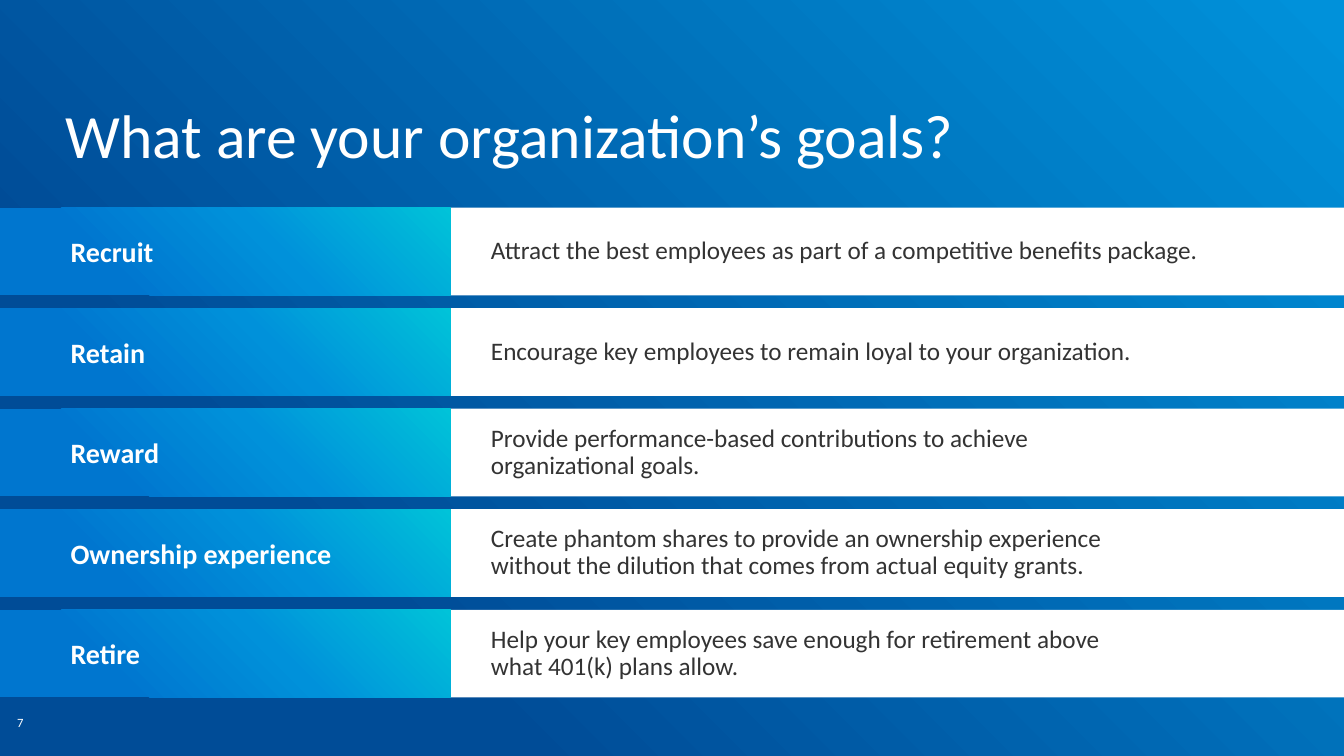
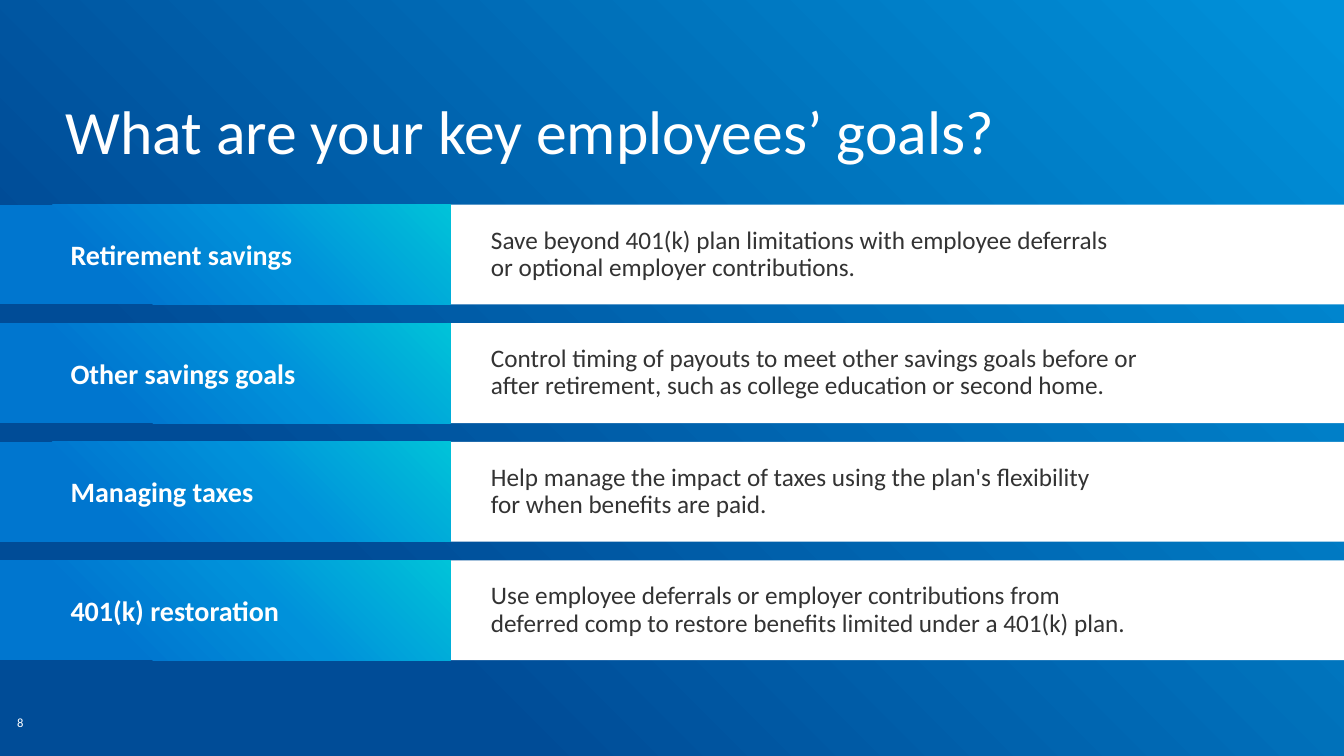
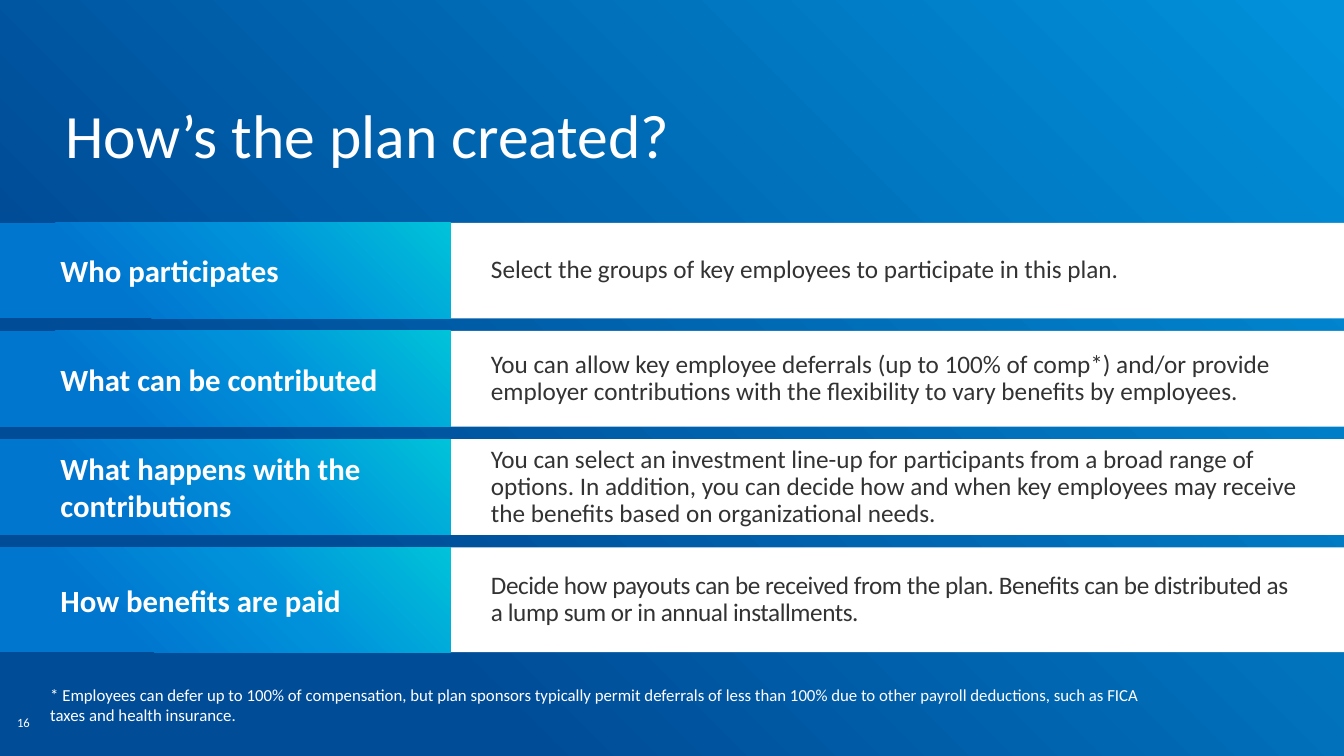
from copy import deepcopy

from pptx import Presentation
from pptx.dml.color import RGBColor
from pptx.enum import shapes, text
from pptx.oxml.ns import qn
from pptx.util import Inches, Pt


def rgb(value):
    return RGBColor.from_string(value)


class Deck:
    """Hold the shared style and the current slide, and draw each kind of element."""

    WHITE, GREY = "FFFFFF", "333333"
    BACKDROP = [(0.25, "004C97"), (0.99, "0091DA")]
    LABEL_FILL = [(0.25, "0076CF"), (0.6, "0091DA"), (1, "00C3D9")]
    WIDTH, HEIGHT, LABEL_WIDTH = 13.33, 7.5, 4.47

    def __init__(self):
        self.presentation = Presentation()
        self.presentation.slide_width = Inches(self.WIDTH)
        self.presentation.slide_height = Inches(self.HEIGHT)
        master = self.presentation.slide_master
        self.paint_gradient(master.background.fill, master.element, self.BACKDROP)
        self.slide = None

    def paint_gradient(self, fill, element, stops):
        fill.gradient()
        fill.gradient_angle = 45
        stop_list = element.find(".//" + qn("a:gsLst"))
        while len(stop_list) < len(stops):
            stop_list.append(deepcopy(stop_list[-1]))
        for stop, (position, color) in zip(fill.gradient_stops, stops):
            stop.position = position
            stop.color.rgb = rgb(color)

    def set_text(self, shape, content, size, color=WHITE, bold=False,
                 margins=(0, 0, 0, 0), anchor=text.MSO_ANCHOR.TOP, spacing=None, tracking=None):
        frame = shape.text_frame
        left, top, right, bottom = map(Inches, margins)
        frame_format = {"word_wrap": True, "vertical_anchor": anchor,
                        "margin_left": left, "margin_top": top,
                        "margin_right": right, "margin_bottom": bottom}
        for name, value in frame_format.items():
            setattr(frame, name, value)
        paragraph = frame.paragraphs[0]
        paragraph.text = content
        paragraph.alignment = text.PP_ALIGN.LEFT
        if spacing:
            paragraph.line_spacing = spacing
        font_format = {"name": "Calibri", "size": Pt(size), "bold": bold}
        for run in paragraph.runs:
            for name, value in font_format.items():
                setattr(run.font, name, value)
            run.font.color.rgb = rgb(color)
            if tracking:
                run._r.get_or_add_rPr().set("spc", str(tracking))

    def text_box(self, box, content, size, **style):
        shape = self.slide.shapes.add_textbox(*map(Inches, box))
        self.set_text(shape, content, size, **style)

    def rectangle(self, left, top, width, height):
        shape = self.slide.shapes.add_shape(
            shapes.MSO_SHAPE.RECTANGLE, *map(Inches, (left, top, width, height)))
        shape.shadow.inherit = False
        shape.line.fill.background()
        return shape

    def start_slide(self, title, number, title_top=0.96):
        self.slide = self.presentation.slides.add_slide(self.presentation.slide_layouts[6])
        self.text_box((0.65, title_top, 12, 0.7), title, 44)
        self.text_box((0.17, 6.83, 0.46, 0.41), number, 9, anchor=text.MSO_ANCHOR.BOTTOM)

    def band(self, top, height, label, description, label_size, indent, tracking):
        middle = text.MSO_ANCHOR.MIDDLE
        panel = self.rectangle(self.LABEL_WIDTH, top, self.WIDTH - self.LABEL_WIDTH, height)
        panel.fill.solid()
        panel.fill.fore_color.rgb = rgb(self.WHITE)
        self.set_text(panel, description, 18, self.GREY, margins=(0.4,) * 4,
                      anchor=middle, spacing=0.9, tracking=tracking)
        tab = self.rectangle(0, top, self.LABEL_WIDTH, height)
        self.paint_gradient(tab.fill, tab.element, self.LABEL_FILL)
        self.set_text(tab, label, label_size, bold=True,
                      margins=(indent, 0.05, 0.4, 0.05), anchor=middle)

    def bands(self, rows, first_top, last_top, height, last_height=None,
              label_size=20, indent=0.7, last_tracking=None):
        last = len(rows) - 1
        pitch = (last_top - first_top) / last
        for index, (label, description) in enumerate(rows):
            is_last = index == last
            self.band(first_top + index * pitch,
                      last_height if is_last and last_height else height,
                      label, description, label_size, indent,
                      last_tracking if is_last else None)


ORGANIZATION_GOALS = [
    ("Recruit", "Attract the best employees as part of a competitive benefits package."),
    ("Retain", "Encourage key employees to remain loyal to your organization."),
    ("Reward", "Provide performance-based contributions to achieve\vorganizational goals."),
    ("Ownership experience", "Create phantom shares to provide an ownership experience\v"
     "without the dilution that comes from actual equity grants."),
    ("Retire", "Help your key employees save enough for retirement above\v"
     "what 401(k) plans allow."),
]
EMPLOYEE_GOALS = [
    ("Retirement savings", "Save beyond 401(k) plan limitations with employee deferrals\v"
     "or optional employer contributions."),
    ("Other savings goals", "Control timing of payouts to meet other savings goals before or\v"
     "after retirement, such as college education or second home."),
    ("Managing taxes", "Help manage the impact of taxes using the plan's flexibility\v"
     "for when benefits are paid."),
    ("401(k) restoration", "Use employee deferrals or employer contributions from\v"
     "deferred comp to restore benefits limited under a 401(k) plan."),
]
PLAN_STEPS = [
    ("Who participates", "Select the groups of key employees to participate in this plan."),
    ("What can be contributed", "You can allow key employee deferrals (up to 100% of comp*) "
     "and/or provide employer contributions with the flexibility to vary benefits by employees."),
    ("What happens with the contributions", "You can select an investment line-up for "
     "participants from a broad range of options. In addition, you can decide how and when "
     "key employees may receive the benefits based on organizational needs."),
    ("How benefits are paid", "Decide how payouts can be received from the plan. "
     "Benefits can be distributed as a lump sum or in annual installments."),
]
FOOTNOTE = ("* Employees can defer up to 100% of compensation, but plan sponsors typically permit "
            "deferrals of less than 100% due to other payroll deductions, such as FICA taxes "
            "and health insurance.")


def main():
    deck = Deck()
    deck.start_slide("What are your organization’s goals?", "7")
    deck.bands(ORGANIZATION_GOALS, 2.06, 6.05, 0.87)

    deck.start_slide("What are your key employees’ goals?", "8", title_top=0.92)
    deck.bands(EMPLOYEE_GOALS, 2.03, 5.56, 0.99)

    deck.start_slide("How’s the plan created?", "16")
    deck.bands(PLAN_STEPS, 2.21, 5.43, 0.95, last_height=1.04,
               label_size=22, indent=0.6, last_tracking=-30)
    deck.text_box((0.4, 6.74, 11.23, 0.46), FOOTNOTE, 12, margins=(0.1, 0.05, 0.1, 0.05))

    deck.presentation.save("out.pptx")


if __name__ == "__main__":
    main()
